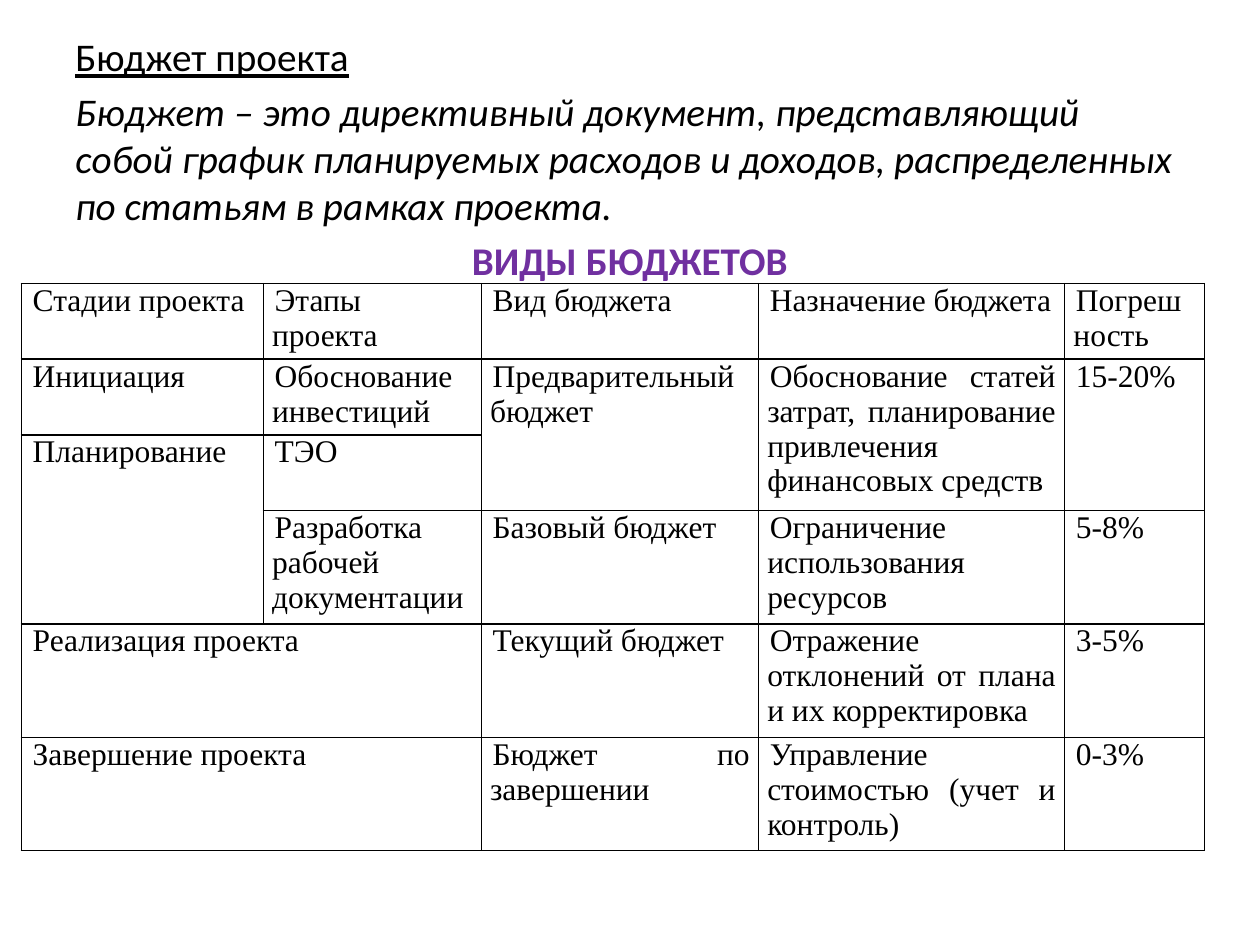
from lxml.etree import SubElement
from pptx import Presentation
from pptx.dml.color import RGBColor
from pptx.enum.text import MSO_ANCHOR, PP_ALIGN as Align
from pptx.oxml.ns import qn
from pptx.util import Inches, Pt

BLACK = RGBColor(0x00, 0x00, 0x00)
PURPLE = RGBColor(0x70, 0x30, 0xA0)

SLIDE_WIDTH, SLIDE_HEIGHT = Inches(10), Inches(7.5)
COLUMN_WIDTHS = [1.92, 1.73, 2.2, 2.43, 1.11]
ROW_HEIGHTS = [0.59] * 3 + [0.88] * 3
ROWS = [
    ["Стадии проекта", "Этапы проекта", "Вид бюджета", "Назначение бюджета", "Погрешность"],
    ["Инициация", "Обоснование инвестиций", "Предварительный бюджет",
     "Обоснование статей затрат, планирование привлечения финансовых средств", "15-20%"],
    ["Планирование", "ТЭО", None, None, None],
    [None, "Разработка рабочей документации", "Базовый бюджет",
     "Ограничение использования ресурсов", "5-8%"],
    ["Реализация проекта", None, "Текущий бюджет",
     "Отражение отклонений от плана и их корректировка", "3-5%"],
    ["Завершение проекта", None, "Бюджет по завершении",
     "Управление стоимостью (учет и контроль)", "0-3%"],
]
MERGES = [((1, column), (2, column)) for column in (2, 3, 4)]
MERGES += [((2, 0), (3, 0))]
MERGES += [((row, 0), (row, 1)) for row in (4, 5)]


def write_text(paragraph, text, font="Calibri", size=22.4, color=BLACK, align=Align.LEFT,
               before=4.5, bold=False, italic=False, underline=False):
    paragraph.alignment = align
    paragraph.space_before = Pt(before)
    run = paragraph.add_run()
    run.text = text
    run.font.name = font
    run.font.size = Pt(size)
    run.font.color.rgb = color
    run.font.bold = bold
    run.font.italic = italic
    run.font.underline = underline


def add_introduction(slide):
    box = slide.shapes.add_textbox(int(SLIDE_WIDTH * 0.05), int(SLIDE_HEIGHT * 0.028),
                                   int(SLIDE_WIDTH * 0.9), int(SLIDE_HEIGHT * 0.252))
    frame = box.text_frame
    frame.word_wrap = True
    write_text(frame.paragraphs[0], "Бюджет проекта", underline=True)
    write_text(frame.add_paragraph(),
               "Бюджет – это директивный документ, представляющий собой график планируемых "
               "расходов и доходов, распределенных по статьям в рамках проекта.", italic=True)
    write_text(frame.add_paragraph(), "ВИДЫ БЮДЖЕТОВ", color=PURPLE, align=Align.CENTER, bold=True)


def add_borders(cell):
    properties = cell._tc.get_or_add_tcPr()
    for position, side in enumerate(("a:lnL", "a:lnR", "a:lnT", "a:lnB")):
        line = SubElement(properties, qn(side), w=str(Pt(1)))
        properties.remove(line)
        properties.insert(position, line)
        fill = SubElement(line, qn("a:solidFill"))
        SubElement(fill, qn("a:srgbClr"), val=str(BLACK))


def format_cell(cell, text):
    cell.fill.background()
    cell.margin_left = cell.margin_right = Inches(0.07)
    cell.margin_top = cell.margin_bottom = 0
    cell.vertical_anchor = MSO_ANCHOR.TOP
    add_borders(cell)
    if text:
        paragraph = cell.text_frame.paragraphs[0]
        write_text(paragraph, text, font="Times New Roman", size=18,
                   align=Align.JUSTIFY, before=0)
        paragraph._p.get_or_add_pPr().set("indent", str(Inches(0.02)))


def add_budget_table(slide):
    frame = slide.shapes.add_table(len(ROWS), len(COLUMN_WIDTHS),
                                   int(SLIDE_WIDTH * 0.017), int(SLIDE_HEIGHT * 0.3),
                                   Inches(sum(COLUMN_WIDTHS)), Inches(sum(ROW_HEIGHTS)))
    table = frame.table
    table.first_row = table.horz_banding = False
    for column, width in zip(table.columns, COLUMN_WIDTHS):
        column.width = Inches(width)
    for row, height, texts in zip(table.rows, ROW_HEIGHTS, ROWS):
        row.height = Inches(height)
        for cell, text in zip(row.cells, texts):
            format_cell(cell, text)
    for first, last in MERGES:
        table.cell(*first).merge(table.cell(*last))


def main():
    presentation = Presentation()
    presentation.slide_width = SLIDE_WIDTH
    presentation.slide_height = SLIDE_HEIGHT
    slide = presentation.slides.add_slide(presentation.slide_layouts[6])
    add_introduction(slide)
    add_budget_table(slide)
    presentation.save("out.pptx")


if __name__ == "__main__":
    main()
